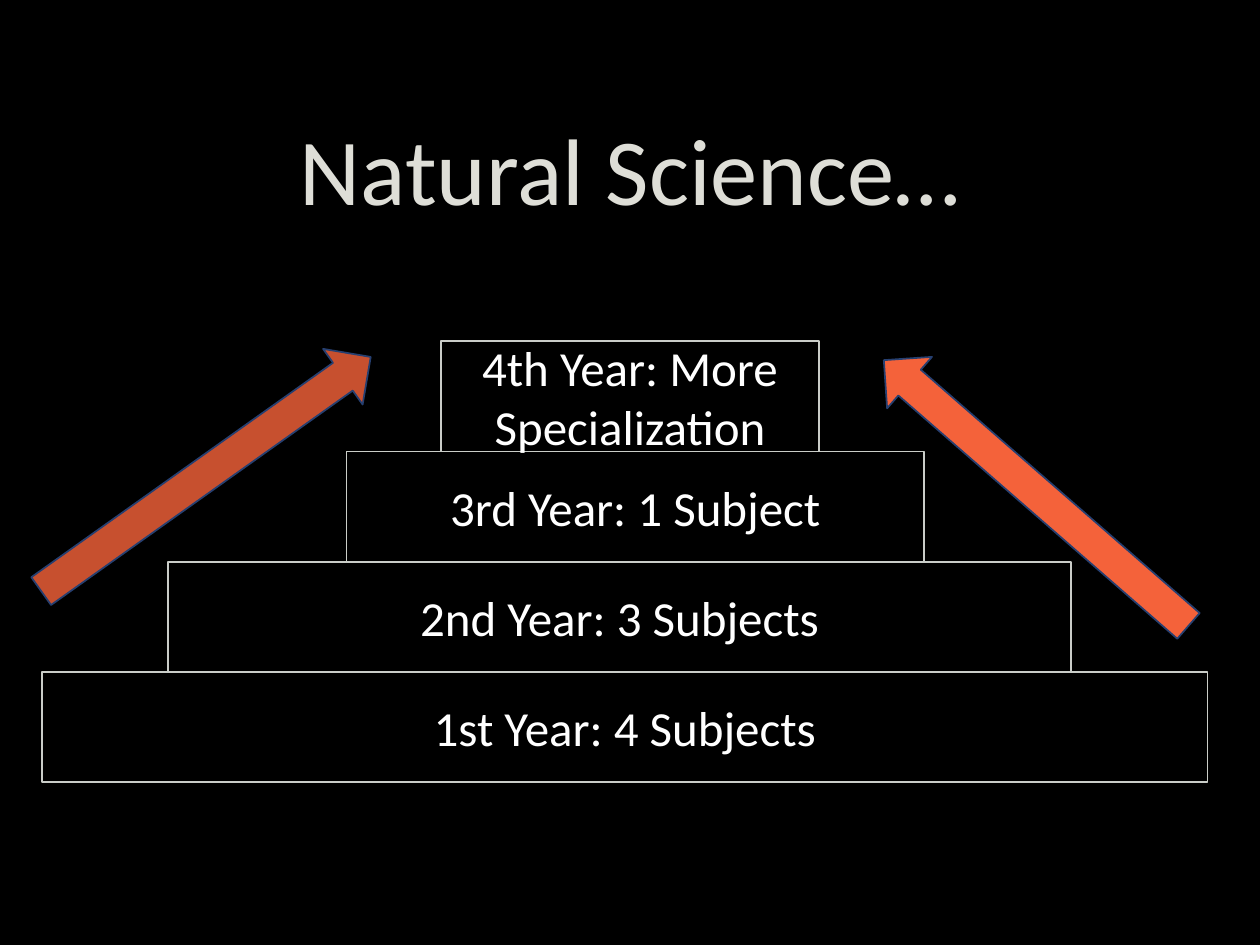
from dataclasses import dataclass

from lxml.etree import SubElement
from pptx import Presentation
from pptx.dml.color import RGBColor
from pptx.enum.shapes import MSO_SHAPE
from pptx.enum.text import MSO_ANCHOR, PP_ALIGN
from pptx.oxml.ns import qn
from pptx.shapes.autoshape import Shape
from pptx.slide import Slide
from pptx.text.text import TextFrame
from pptx.util import Pt

COLORS = {
    "background": "000000",
    "title": "DEDED7",
    "step": "000000",
    "step_line": "CACDC8",
    "step_text": "FFFFFF",
    "arrow": "F4623A",
    "arrow_line": "263F70",
}
FONT = "Calibri"
BOTTOM_STEP_TOP = 384
STEP_HEIGHT = 63
ARROW_LENGTH, ARROW_HEIGHT = 231, 39


@dataclass
class Step:
    label: str
    left: float
    width: float


@dataclass
class Arrow:
    left: float
    top: float
    rotation: float
    opacity: int = 100


STEPS = [
    Step("1st Year: 4 Subjects", 24, 666),
    Step("2nd Year: 3 Subjects", 96, 516),
    Step("3rd Year: 1 Subject", 198, 330),
    Step("4th Year: More Specialization", 252, 216),
]
ARROWS = [
    Arrow(2.2, 251.4, 324.6, opacity=82),
    Arrow(476.6, 262.2, 221.1),
]


def color(name: str) -> RGBColor:
    return RGBColor.from_string(COLORS[name])


def write(frame: TextFrame, text: str, size: float, color_name: str, anchor: MSO_ANCHOR) -> None:
    frame.word_wrap = True
    frame.vertical_anchor = anchor
    paragraph = frame.paragraphs[0]
    paragraph.alignment = PP_ALIGN.CENTER
    run = paragraph.add_run()
    run.text = text
    run.font.name = FONT
    run.font.size = Pt(size)
    run.font.color.rgb = color(color_name)


def style(shape: Shape, fill: str, line: str) -> None:
    shape.shadow.inherit = False
    shape.fill.solid()
    shape.fill.fore_color.rgb = color(fill)
    shape.line.color.rgb = color(line)
    shape.line.width = Pt(1)


def add_title(slide: Slide, text: str) -> None:
    title = slide.shapes.add_textbox(Pt(54), Pt(54), Pt(612), Pt(78))
    write(title.text_frame, text, 54, "title", MSO_ANCHOR.BOTTOM)


def add_step(slide: Slide, step: Step, level: int) -> None:
    """Draw one pyramid step; level 0 is the lowest."""
    top = BOTTOM_STEP_TOP - level * STEP_HEIGHT
    block = slide.shapes.add_shape(
        MSO_SHAPE.RECTANGLE, Pt(step.left), Pt(top), Pt(step.width), Pt(STEP_HEIGHT)
    )
    style(block, "step", "step_line")
    write(block.text_frame, step.label, 28, "step_text", MSO_ANCHOR.MIDDLE)


def add_arrow(slide: Slide, arrow: Arrow) -> None:
    pointer = slide.shapes.add_shape(
        MSO_SHAPE.RIGHT_ARROW, Pt(arrow.left), Pt(arrow.top), Pt(ARROW_LENGTH), Pt(ARROW_HEIGHT)
    )
    pointer.rotation = arrow.rotation
    style(pointer, "arrow", "arrow_line")
    if arrow.opacity < 100:
        fill_color = pointer.fill._xPr.find(qn("a:solidFill")).find(qn("a:srgbClr"))
        SubElement(fill_color, qn("a:alpha")).set("val", str(arrow.opacity * 1000))


def main() -> None:
    presentation = Presentation()
    presentation.slide_width, presentation.slide_height = Pt(720), Pt(540)
    slide = presentation.slides.add_slide(presentation.slide_layouts[6])
    slide.background.fill.solid()
    slide.background.fill.fore_color.rgb = color("background")

    add_title(slide, "Natural Science…")
    for level, step in enumerate(STEPS):
        add_step(slide, step, level)
    for arrow in ARROWS:
        add_arrow(slide, arrow)

    presentation.save("out.pptx")


if __name__ == "__main__":
    main()
